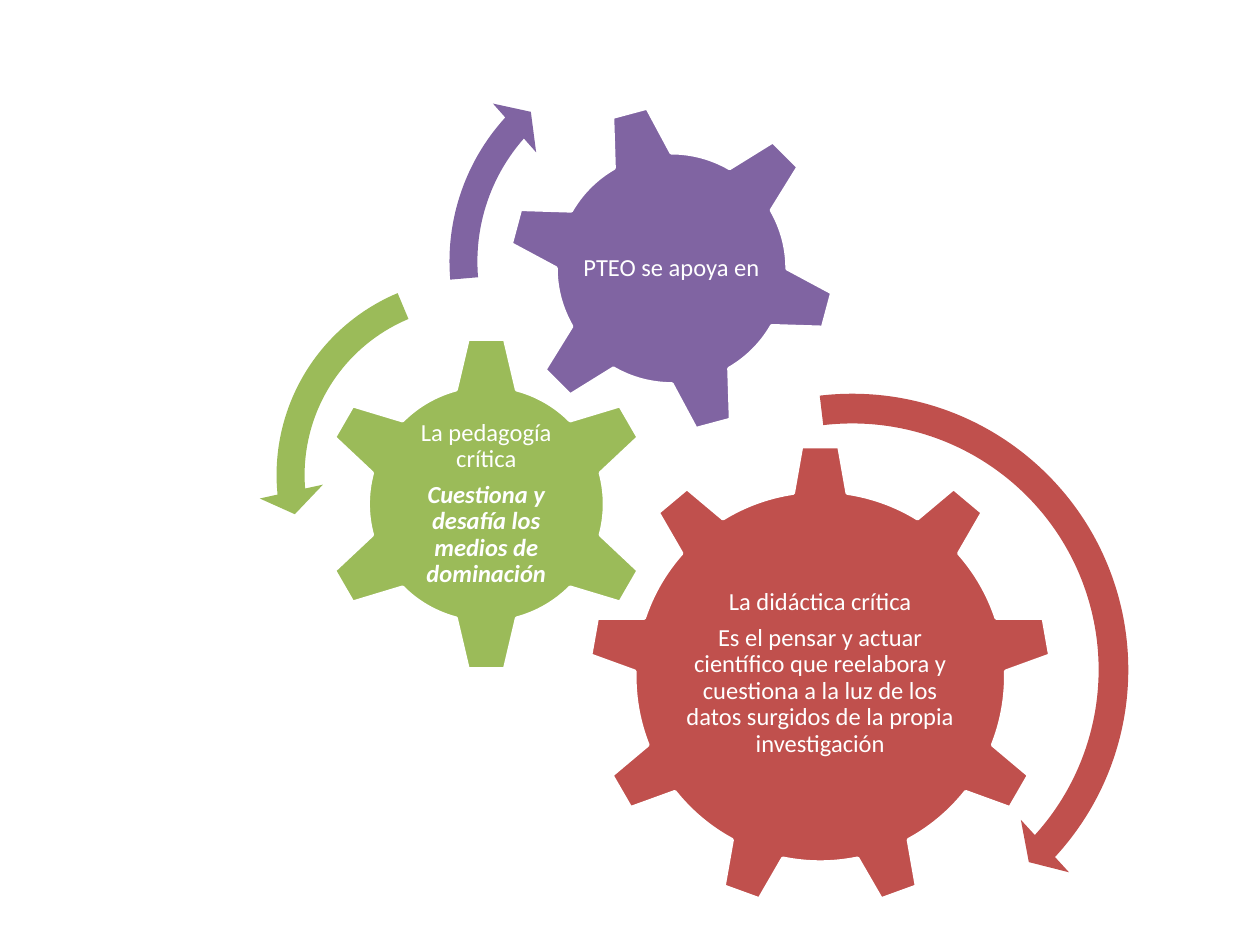
from pptx import Presentation
from pptx import util as u
from pptx.dml import color
from pptx.enum import shapes, text

COLORS = {
    "red": "C0504D",
    "green": "9BBB59",
    "purple": "8064A2",
    "white": "FFFFFF",
}
WIDTH = u.Inches(10)
HEIGHT = u.Inches(7.5)
KIND = shapes.MSO_SHAPE


def rgb(name):
    return color.RGBColor.from_string(COLORS[name])


def centered(center, width, height):
    x, y = center
    across, down = (round(WIDTH * share / 100) for share in (width, height))
    left = round(WIDTH * x / 100 - across / 2)
    top = round(HEIGHT * y / 100 - down / 2)
    return left, top, across, down


def add_solid(page, kind, center, size, fill):
    shape = page.shapes.add_shape(kind, *centered(center, size, size))
    shape.shadow.inherit = False
    shape.fill.solid()
    shape.fill.fore_color.rgb = rgb(fill)
    return shape


def add_gear(page, kind, center, size, fill, rotation=0):
    gear = add_solid(page, kind, center, size, fill)
    gear.rotation = rotation
    gear.line.color.rgb = rgb("white")
    gear.line.width = u.Pt(2)


def add_arrow(page, kind, center, size, fill, adjustments):
    arrow = add_solid(page, kind, center, size, fill)
    arrow.line.fill.background()
    for index, value in enumerate(adjustments):
        arrow.adjustments[index] = value


def add_label(page, center, width, height, lines):
    box = page.shapes.add_textbox(*centered(center, width, height))
    frame = box.text_frame
    frame.word_wrap = True
    frame.vertical_anchor = text.MSO_ANCHOR.MIDDLE
    frame.margin_left = frame.margin_right = u.Inches(0.02)
    frame.margin_top = frame.margin_bottom = u.Inches(0.02)
    for index, (words, strong) in enumerate(lines):
        para = frame.add_paragraph() if index else frame.paragraphs[0]
        para.alignment = text.PP_ALIGN.CENTER
        para.line_spacing = 0.9
        para.space_after = u.Pt(5)
        span = para.add_run()
        span.text = words
        span.font.name = "Calibri"
        span.font.size = u.Pt(14)
        span.font.color.rgb = rgb("white")
        if strong:
            span.font.bold = span.font.italic = True


def main():
    deck = Presentation()
    deck.slide_width, deck.slide_height = WIDTH, HEIGHT
    page = deck.slides.add_slide(deck.slide_layouts[6])

    add_gear(page, KIND.GEAR_9, (65.1, 71.6), 36.8, "red")
    add_label(page, (65.1, 71.27), 22, 18.9, [
        ("La didáctica crítica", False),
        ("Es el pensar y actuar científico que reelabora y cuestiona "
         "a la luz de los datos surgidos de la propia investigación", False),
    ])
    add_gear(page, KIND.GEAR_6, (38.6, 53.33), 26.8, "green")
    add_label(page, (38.6, 53.33), 13.3, 13.2, [
        ("La pedagogía crítica", False),
        ("Cuestiona y desafía los medios de dominación", True),
    ])
    add_gear(page, KIND.GEAR_6, (53.3, 28.4), 26.2, "purple", 345)
    add_label(page, (53.3, 28.4), 14.7, 14.7, [("PTEO se apoya en", False)])

    add_arrow(page, KIND.CIRCULAR_ARROW, (67.65, 70.87), 47.1, "red",
              (0.05, 2.99, 25.49, 157.93, 0.06))
    add_arrow(page, KIND.LEFT_CIRCULAR_ARROW, (37.6, 50.27), 34.2, "green",
              (0.065, 4.3, 104.89, 148.38, 0.075))
    add_arrow(page, KIND.CIRCULAR_ARROW, (52.65, 27.67), 36.9, "purple",
              (0.06, 3.94, 133.14, 105.08, 0.07))

    deck.save("out.pptx")


if __name__ == "__main__":
    main()
